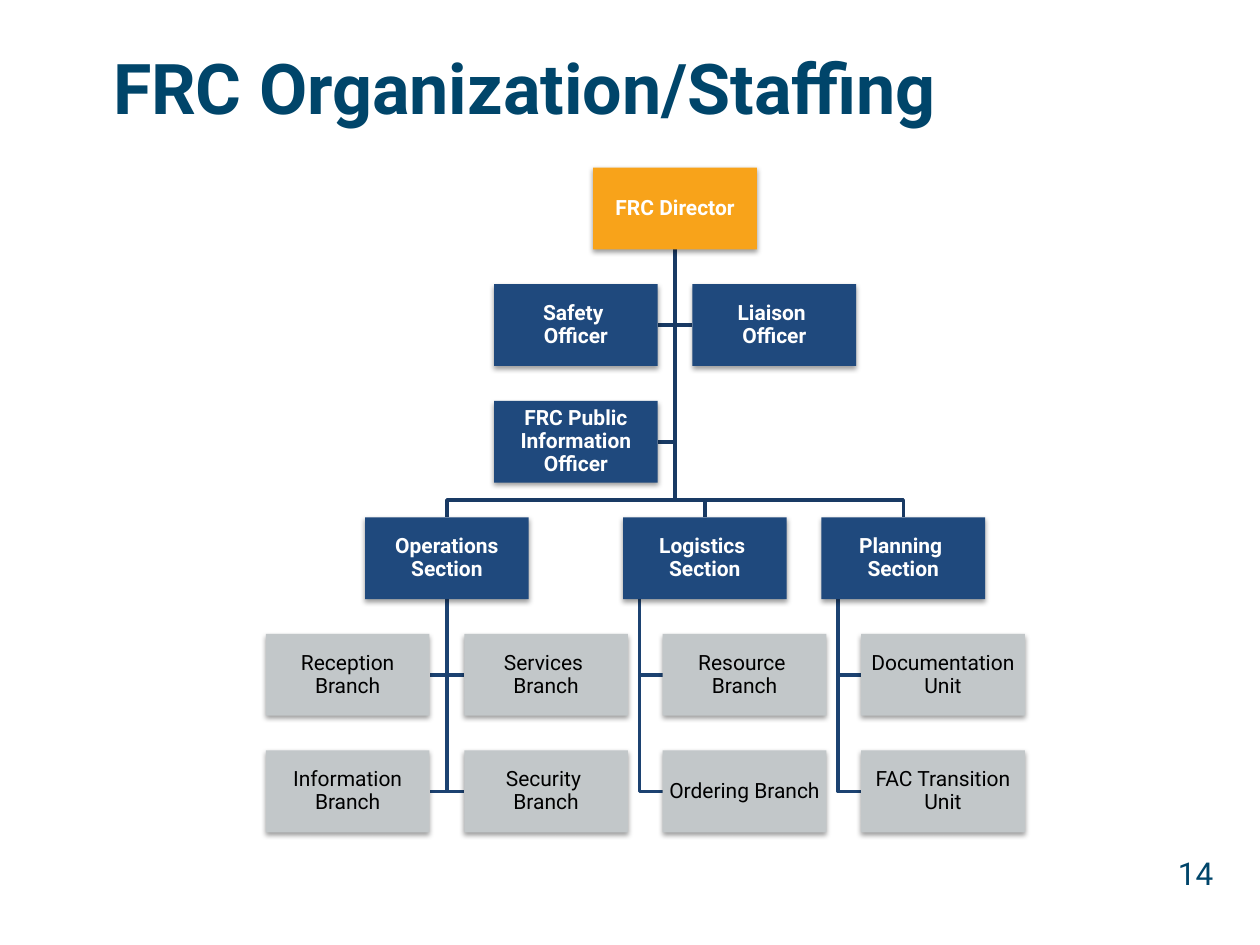
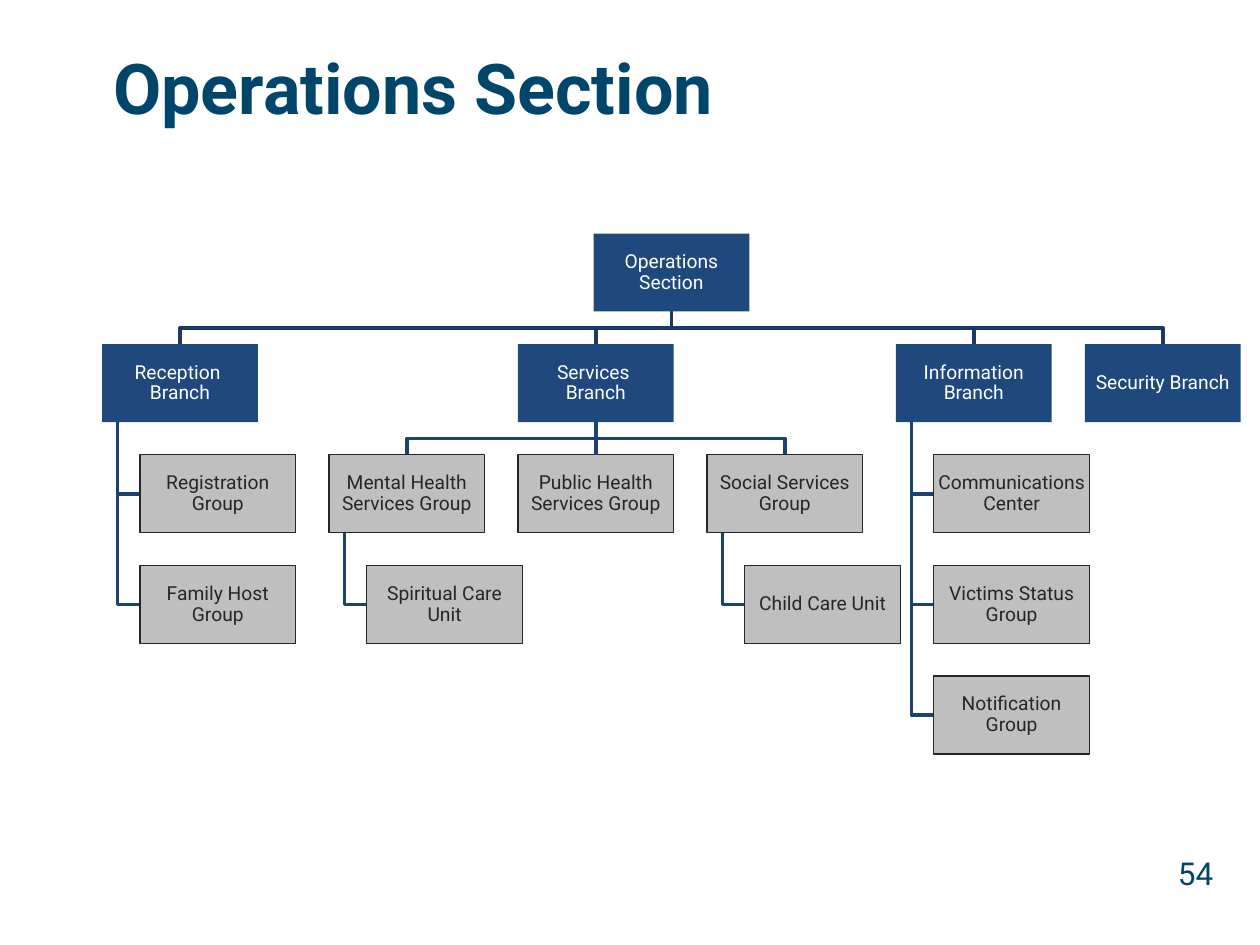
from dataclasses import dataclass

from lxml import etree
from pptx import Presentation
from pptx.dml.color import RGBColor
from pptx.enum.shapes import MSO_CONNECTOR as Link, MSO_SHAPE as Preset
from pptx.enum.text import MSO_ANCHOR as Anchor, PP_ALIGN as Align
from pptx.oxml import parse_xml
from pptx.oxml.ns import nsdecls, qn
from pptx.util import Cm, Pt

FONT = "Roboto"
TEAL, NAVY, ORANGE, WHITE, BLACK = "00456A", "1F497D", "F8A31A", "FFFFFF", "000000"
SILVER, GRAY, CHARCOAL = "C2C7C9", "BFBFBF", "262626"
TOP_LINK, LOWER_LINK = "193A64", "1C4271"
SHADOW = (
    f'<a:effectLst {nsdecls("a")}><a:outerShdw blurRad="39400" dist="20300" dir="5400000" '
    'rotWithShape="0"><a:srgbClr val="000000"><a:alpha val="38000"/></a:srgbClr>'
    "</a:outerShdw></a:effectLst>"
)


@dataclass
class Rank:
    """Look of the boxes on one level of command."""
    fill: str
    ink: str
    bold: bool = False
    border: str = ""


@dataclass
class Post:
    """One box: its wording, grid place, rank and link to its boss."""
    text: str
    column: float
    row: int
    rank: Rank
    boss: str = ""
    route: str = ""


@dataclass
class Grid:
    """Grid of an organization chart, in centimetres."""
    left: float
    top: float
    column_pitch: float
    row_pitch: float
    width: float
    height: float
    text_size: int
    shadow: bool = False

    def corner(self, post):
        """Return the top left corner of a post."""
        return self.left + post.column * self.column_pitch, self.top + post.row * self.row_pitch


DIRECTOR = Rank(ORANGE, WHITE, bold=True)
CHIEF = Rank(NAVY, WHITE, bold=True)
UNIT = Rank(SILVER, BLACK)
BRANCH = Rank(NAVY, WHITE)
GROUP = Rank(GRAY, CHARCOAL, border=CHARCOAL)

STAFFING_GRID = Grid(5.36, 3.38, 4, 2.35, 3.3, 1.65, 12, shadow=True)
STAFFING = {
    "director": Post("FRC Director", 1.65, 0, DIRECTOR),
    "safety": Post("Safety \vOfficer", 1.15, 1, CHIEF, "director", "side"),
    "liaison": Post("Liaison \vOfficer", 2.15, 1, CHIEF, "director", "side"),
    "press": Post("FRC Public Information Officer", 1.15, 2, CHIEF, "director", "side"),
    "operations": Post("Operations Section", 0.5, 3, CHIEF, "director", "fork"),
    "logistics": Post("Logistics \vSection", 1.8, 3, CHIEF, "director", "fork"),
    "planning": Post("Planning \vSection", 2.8, 3, CHIEF, "director", "fork"),
    "reception": Post("Reception Branch", 0, 4, UNIT, "operations", "side"),
    "services": Post("Services \vBranch", 1, 4, UNIT, "operations", "side"),
    "information": Post("Information Branch", 0, 5, UNIT, "operations", "side"),
    "security": Post("Security \vBranch", 1, 5, UNIT, "operations", "side"),
    "resource": Post("Resource \vBranch", 2, 4, UNIT, "logistics", "hang"),
    "ordering": Post("Ordering Branch", 2, 5, UNIT, "logistics", "hang"),
    "documentation": Post("Documentation Unit", 3, 4, UNIT, "planning", "hang"),
    "transition": Post("FAC Transition Unit", 3, 5, UNIT, "planning", "hang"),
}

OPERATIONS_GRID = Grid(2.06, 4.71, 3.81, 2.23, 3.14, 1.57, 11)
OPERATIONS = {
    "operations": Post("Operations Section", 2.6, 0, BRANCH),
    "reception": Post("Reception \vBranch", 0, 1, BRANCH, "operations", "fork"),
    "services": Post("Services \vBranch", 2.2, 1, BRANCH, "operations", "fork"),
    "information": Post("Information Branch", 4.2, 1, BRANCH, "operations", "fork"),
    "security": Post("Security Branch", 5.2, 1, BRANCH, "operations", "fork"),
    "registration": Post("Registration Group", 0.2, 2, GROUP, "reception", "hang"),
    "host": Post("Family Host Group", 0.2, 3, GROUP, "reception", "hang"),
    "mental": Post("Mental Health Services Group", 1.2, 2, GROUP, "services", "fork"),
    "public": Post("Public Health Services Group", 2.2, 2, GROUP, "services", "straight"),
    "social": Post("Social Services Group", 3.2, 2, GROUP, "services", "fork"),
    "spiritual": Post("Spiritual Care Unit", 1.4, 3, GROUP, "mental", "hang"),
    "child": Post("Child Care Unit", 3.4, 3, GROUP, "social", "hang"),
    "center": Post("Communications Center", 4.4, 2, GROUP, "information", "hang"),
    "victims": Post("Victims Status Group", 4.4, 3, GROUP, "information", "hang"),
    "notification": Post("Notification Group", 4.4, 4, GROUP, "information", "hang"),
}


def color(value):
    """Turn a hex string into a colour."""
    return RGBColor.from_string(value)


def style_text(frame, size, ink, bold=False, align=Align.LEFT):
    """Format the only paragraph of a text frame."""
    frame.word_wrap = True
    paragraph = frame.paragraphs[0]
    paragraph.alignment = align
    for run in paragraph.runs:
        run.font.name, run.font.size, run.font.bold = FONT, Pt(size), bold
        run.font.color.rgb = color(ink)


def add_label(slide, text, place, size, bold=False, align=Align.LEFT, anchor=Anchor.TOP):
    """Add a teal text box at a place given in centimetres."""
    frame = slide.shapes.add_textbox(*map(Cm, place)).text_frame
    frame.text = text
    frame.vertical_anchor = anchor
    style_text(frame, size, TEAL, bold, align)


def link_points(grid, boss, post):
    """Return the corners of the path from a boss to a post."""
    boss_x, boss_y = grid.corner(boss)
    x, y = grid.corner(post)
    bottom = boss_y + grid.height
    middle = boss_x + grid.width / 2
    side_y = y + grid.height / 2
    if post.route == "fork":
        bar_y = y - (grid.row_pitch - grid.height) / 2
        end_x = x + grid.width / 2
        return [(middle, bottom), (middle, bar_y), (end_x, bar_y), (end_x, y)]
    trunk_x = boss_x + grid.width / 10 if post.route == "hang" else middle
    end_x = x if x > trunk_x else x + grid.width
    return [(trunk_x, bottom), (trunk_x, side_y), (end_x, side_y)]


def style_link(link, boss):
    """Colour a link by the level of the boss."""
    link.line.color.rgb = color(LOWER_LINK if boss.boss else TOP_LINK)
    link.line.width = Pt(2)


def add_bent_link(slide, grid, boss, post):
    """Draw an open path from a boss to a post."""
    start, *corners = [(Cm(x), Cm(y)) for x, y in link_points(grid, boss, post)]
    builder = slide.shapes.build_freeform(*start)
    builder.add_line_segments(corners, close=False)
    link = builder.convert_to_shape()
    link.fill.background()
    link.shadow.inherit = False
    style_link(link, boss)


def add_straight_link(slide, boss, boss_box, post_box):
    """Join the bottom of one box to the top of the box below it."""
    link = slide.shapes.add_connector(Link.STRAIGHT, 0, 0, 0, 0)
    link.begin_connect(boss_box, 2)
    link.end_connect(post_box, 0)
    style_link(link, boss)
    etree.SubElement(link._element.spPr, qn("a:effectLst"))


def add_post(slide, grid, post):
    """Draw the box of a post and return it."""
    place = (*grid.corner(post), grid.width, grid.height)
    box = slide.shapes.add_shape(Preset.RECTANGLE, *map(Cm, place))
    box.fill.solid()
    box.fill.fore_color.rgb = color(post.rank.fill)
    if post.rank.border:
        box.line.color.rgb = color(post.rank.border)
        box.line.width = Pt(0.75)
    else:
        box.line.fill.background()
    box.shadow.inherit = False
    if grid.shadow:
        properties = box._element.spPr
        properties.replace(properties.find(qn("a:effectLst")), parse_xml(SHADOW))
    frame = box.text_frame
    frame.text = post.text
    frame.margin_left = frame.margin_right = frame.margin_top = frame.margin_bottom = Cm(0.02)
    frame.vertical_anchor = Anchor.MIDDLE
    frame.paragraphs[0].line_spacing = 0.9
    style_text(frame, grid.text_size, post.rank.ink, post.rank.bold, Align.CENTER)
    return box


def add_chart_slide(deck, title, number, grid, posts):
    """Add a slide with a title, a page number and an organization chart."""
    slide = deck.slides.add_slide(deck.slide_layouts[6])
    add_label(slide, number, (22.17, 17.09, 2.54, 1.47), 18, align=Align.RIGHT)
    add_label(slide, title, (2.03, 0.15, 22.63, 3.18), 40, bold=True, anchor=Anchor.MIDDLE)
    for post in posts.values():
        if post.boss and post.route != "straight":
            add_bent_link(slide, grid, posts[post.boss], post)
    boxes = {key: add_post(slide, grid, post) for key, post in posts.items()}
    for key, post in posts.items():
        if post.route == "straight":
            add_straight_link(slide, posts[post.boss], boxes[post.boss], boxes[key])


def main():
    """Build the two chart slides."""
    deck = Presentation()
    deck.slide_width, deck.slide_height = Cm(25.4), Cm(19.05)
    add_chart_slide(deck, "FRC Organization/Staffing", "14", STAFFING_GRID, STAFFING)
    add_chart_slide(deck, "Operations Section", "54", OPERATIONS_GRID, OPERATIONS)
    deck.save("out.pptx")


if __name__ == "__main__":
    main()
